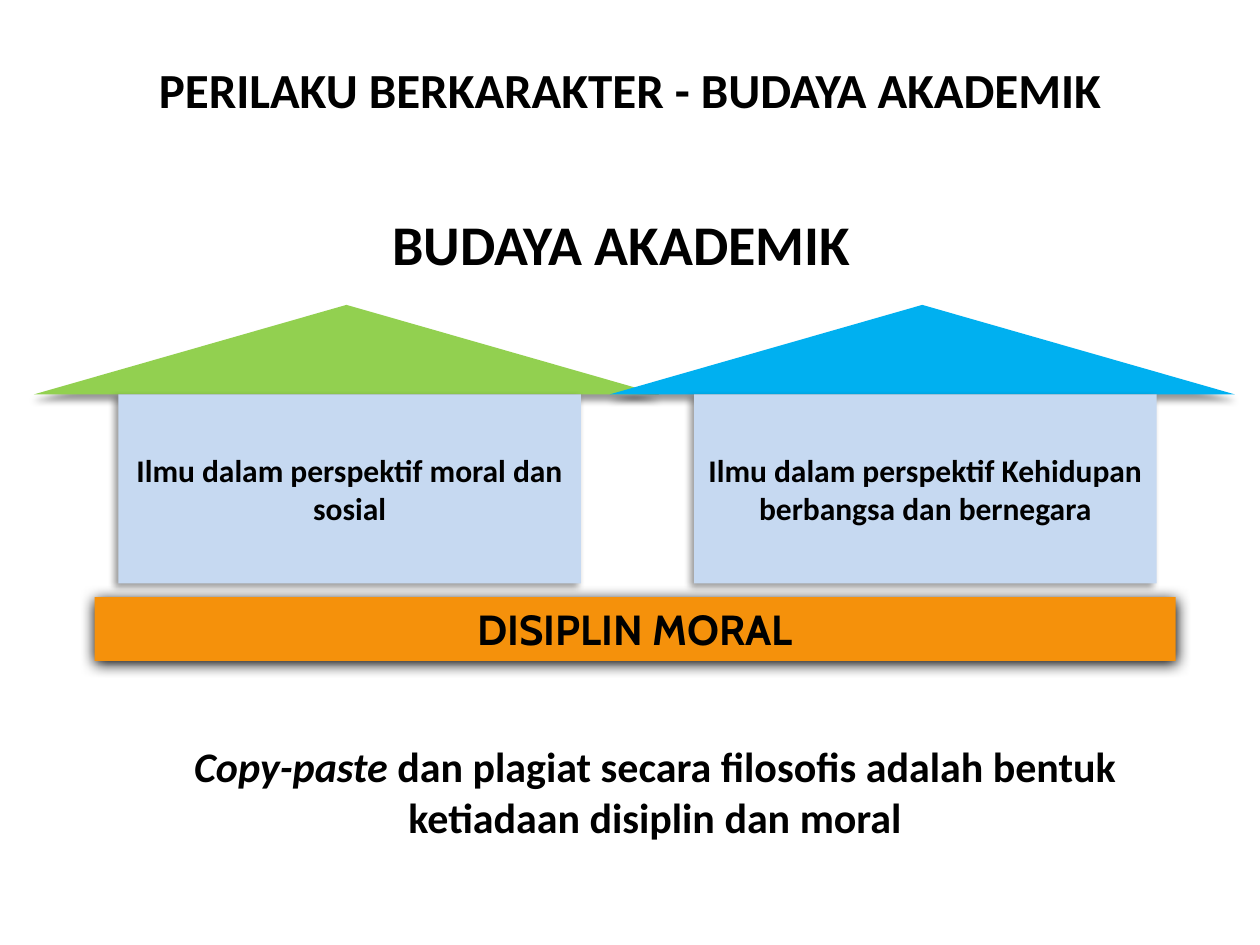
import dataclasses
import typing

import lxml.etree
import pptx
import pptx.dml.color
import pptx.enum.shapes
import pptx.enum.text
import pptx.oxml.ns
import pptx.util

WIDE = pptx.util.Inches(10)
HIGH = pptx.util.Inches(7.5)
FORM = pptx.enum.shapes.MSO_SHAPE
ANCHOR = pptx.enum.text.MSO_ANCHOR


@dataclasses.dataclass
class Box:
    """Place and size, in percent of the slide's width and height."""
    left: float
    top: float
    width: float
    height: float

    def lengths(self) -> tuple[int, ...]:
        return (int(WIDE * self.left / 100), int(HIGH * self.top / 100),
                int(WIDE * self.width / 100), int(HIGH * self.height / 100))


@dataclasses.dataclass
class Shade:
    """Shadow: opacity in percent, blur and distance in points, angle."""
    alpha: int
    blur: float
    dist: float
    angle: int


class House(typing.NamedTuple):
    roof: str
    words: str


def color(code: str) -> pptx.dml.color.RGBColor:
    return pptx.dml.color.RGBColor.from_string(code)


def write(shape, runs: list[tuple[str, bool]], size: int,
          face: str = "Calibri", anchor=ANCHOR.MIDDLE) -> None:
    frame = shape.text_frame
    frame.word_wrap = True
    frame.vertical_anchor = anchor
    line = frame.paragraphs[0]
    line.alignment = pptx.enum.text.PP_ALIGN.CENTER
    font = line.font
    font.name, font.size, font.bold = face, pptx.util.Pt(size), True
    font.color.rgb = color("000000")
    for words, slant in runs:
        run = line.add_run()
        run.text = words
        if slant:
            run.font.italic = True


def label(slide, box: Box, runs: list[tuple[str, bool]], size: int,
          anchor=ANCHOR.TOP) -> None:
    write(slide.shapes.add_textbox(*box.lengths()), runs, size, anchor=anchor)


def block(slide, form, box: Box, fill: str, shade: Shade):
    shape = slide.shapes.add_shape(form, *box.lengths())
    shape.fill.solid()
    shape.fill.fore_color.rgb = color(fill)
    shape.line.fill.background()
    shape.shadow.inherit = False
    # Soft outer shadow
    name = pptx.oxml.ns.qn
    effects = shape._element.spPr.find(name("a:effectLst"))
    outer = lxml.etree.SubElement(
        effects, name("a:outerShdw"),
        blurRad=str(pptx.util.Pt(shade.blur)),
        dist=str(pptx.util.Pt(shade.dist)),
        dir=str(shade.angle * 60000), algn="ctr", rotWithShape="0")
    tint = lxml.etree.SubElement(outer, name("a:srgbClr"), val="000000")
    lxml.etree.SubElement(tint, name("a:alpha"), val=str(shade.alpha * 1000))
    return shape


def build(slide, house: House, index: int) -> None:
    shift = 45.7 * index
    block(slide, FORM.FLOWCHART_EXTRACT, Box(2.7 + shift, 32.27, 49.6, 9.47),
          house.roof, Shade(40, 4, 3, 90))
    wall = block(slide, FORM.RECTANGLE, Box(9.4 + shift, 41.73, 36.7, 20),
                 "C6D9F1", Shade(40, 4, 3, 135))
    write(wall, [(house.words, False)], 18)


HOUSES = [
    House("92D050", "Ilmu dalam perspektif moral dan sosial"),
    House("00B0F0", "Ilmu dalam perspektif Kehidupan berbangsa dan bernegara"),
]


def main() -> None:
    deck = pptx.Presentation()
    deck.slide_width, deck.slide_height = WIDE, HIGH
    slide = deck.slides.add_slide(deck.slide_layouts[6])

    # Closing remark
    label(slide, Box(9.1, 77.73, 85.8, 12.13),
          [("Copy-paste ", True),
           ("dan plagiat secara filosofis adalah bentuk ketiadaan "
            "disiplin dan moral", False)], 24)

    # Foundation under both houses
    base = block(slide, FORM.RECTANGLE, Box(7.5, 63.2, 85.8, 6.73),
                 "F5910B", Shade(100, 8.5, 1, 90))
    write(base, [("DISIPLIN MORAL", False)], 24, "Cabin", ANCHOR.TOP)

    # Heading and title
    label(slide, Box(16.1, 21.47, 66.5, 8.53), [("BUDAYA AKADEMIK", False)], 32)
    label(slide, Box(0, 1.07, 100, 16.67),
          [("PERILAKU BERKARAKTER - BUDAYA AKADEMIK", False)], 28,
          ANCHOR.MIDDLE)

    # Houses, side by side
    for index, house in enumerate(HOUSES):
        build(slide, house, index)

    deck.save("out.pptx")


if __name__ == "__main__":
    main()
